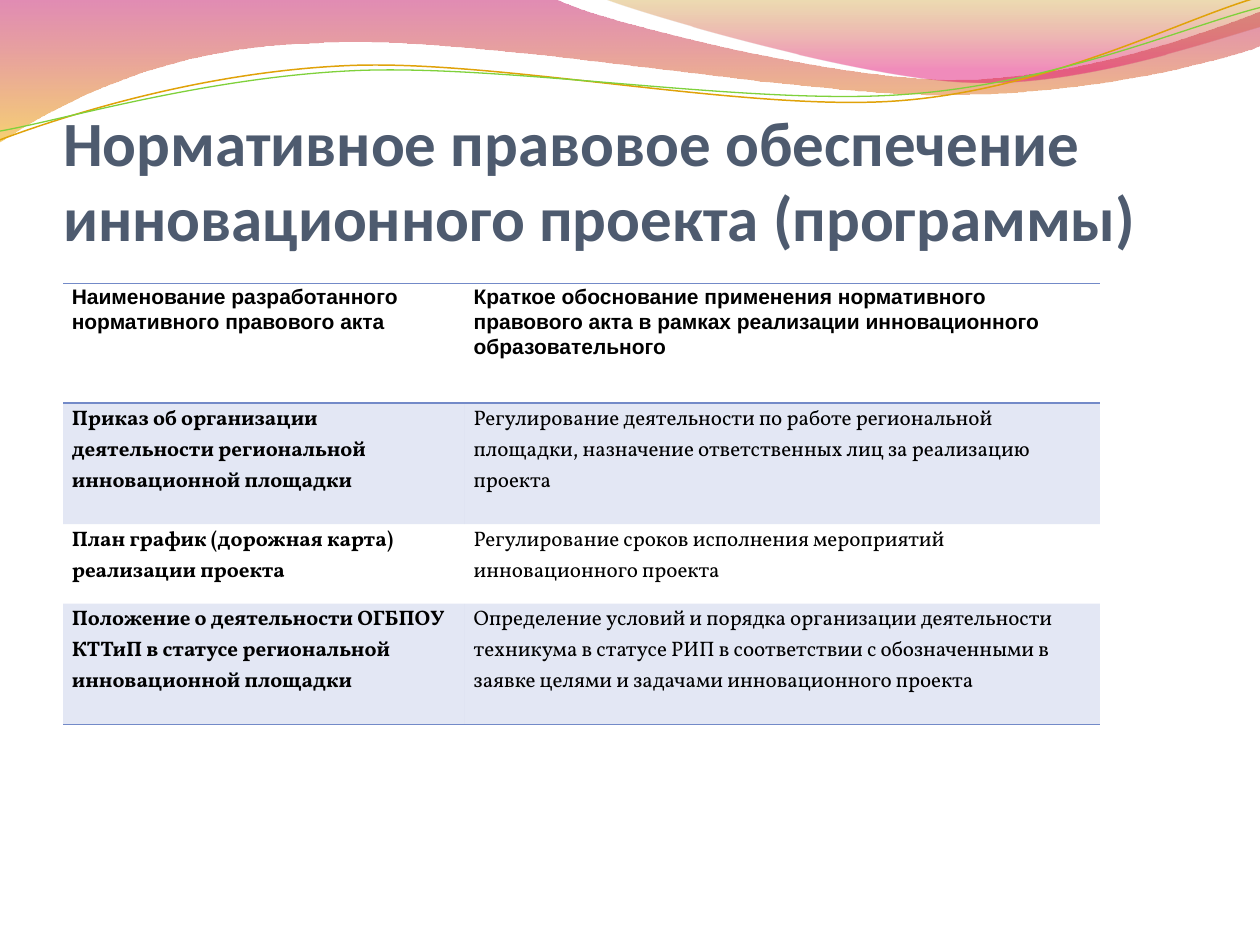
from dataclasses import dataclass
from math import cos, radians, sin

from lxml.etree import SubElement
from pptx import Presentation
from pptx.dml.color import RGBColor
from pptx.enum.text import MSO_ANCHOR as Anchor, MSO_AUTO_SIZE as AutoSize, PP_ALIGN as Align
from pptx.oxml import parse_xml
from pptx.oxml.ns import nsdecls, qn
from pptx.util import Inches, Pt

Point = tuple[float, float]
ACCENT = "738AC8"
NO_STYLE = "{2D5ABB26-0587-4C30-8999-92F81FD0307C}"
LINE_TILT = 357.3
LINE_CENTER = (4.99, 0.58)


@dataclass
class Stop:
    position: float
    color: str
    opacity: int


@dataclass
class Wave:
    """A segment of one point is a line; one of three points is a cubic curve."""
    start: Point
    segments: list[tuple[Point, ...]]
    stops: tuple[Stop, ...] = ()
    color: str = ""
    width: float = 0


@dataclass
class Row:
    height: float
    name: str
    purpose: str
    font: str = "Vollkorn"
    header: bool = False
    shaded: bool = False
    borders: tuple[str, ...] = ()


WAVES = [
    Wave((0, 0), [
        ((4.4, -0.01),),
        ((4.76, 0.17), (6.64, 0.63), (7.58, 0.63)),
        ((8.53, 0.63), (9.58, 0.26), (10, 0.09)),
        ((10.01, 0.36),),
        ((9.83, 0.44), (8.7, 0.76), (7.46, 0.75)),
        ((6.22, 0.75), (3.82, 0.28), (2.57, 0.34)),
        ((1.29, 0.36), (0.46, 0.83), (-0.01, 1.13)),
        ((0, 0),),
    ], stops=(Stop(0, "BD0059", 45), Stop(1, "F0AB00", 55))),
    Wave((4.79, -0.01), [
        ((5.09, 0.11), (6.82, 0.62), (7.69, 0.65)),
        ((8.56, 0.69), (9.61, 0.32), (10, 0.21)),
        ((10, 0),),
        ((4.79, -0.01),),
    ], stops=(Stop(0, "C38B00", 30), Stop(0.8, "E1006B", 45))),
    Wave((0, 1.11), [
        ((0.48, 0.93), (1.58, 0.57), (2.77, 0.52)),
        ((3.95, 0.47), (5.93, 0.89), (7.13, 0.8)),
        ((8.33, 0.71), (9.38, 0.15), (9.98, -0.02)),
    ], color="E0A209", width=0.85),
    Wave((0, 1.04), [
        ((0.47, 0.96), (1.64, 0.61), (2.83, 0.56)),
        ((4.03, 0.51), (5.97, 0.84), (7.17, 0.75)),
        ((8.36, 0.67), (9.41, 0.21), (10, 0.06)),
    ], color="7FD13B", width=0.75),
]

COLUMN_WIDTHS = (3.19, 5.04)
ROWS = [
    Row(0.95, "Наименование разработанного нормативного правового акта",
        "Краткое обоснование применения нормативного правового акта в рамках "
        "реализации инновационного образовательного",
        font="Arial", header=True, borders=("lnT", "lnB")),
    Row(0.96, "Приказ об организации деятельности региональной инновационной площадки",
        "Регулирование деятельности по работе региональной площадки, назначение "
        "ответственных лиц за реализацию проекта", shaded=True),
    Row(0.63, "План график (дорожная карта) реализации проекта",
        "Регулирование сроков исполнения мероприятий инновационного проекта"),
    Row(0.96, "Положение о деятельности ОГБПОУ КТТиП в статусе региональной "
        "инновационной площадки",
        "Определение условий и порядка организации деятельности техникума в статусе "
        "РИП в соответствии с обозначенными в заявке целями и задачами "
        "инновационного проекта", shaded=True, borders=("lnB",)),
]


def rgb(value: str) -> RGBColor:
    return RGBColor.from_string(value)


def set_opacity(color_element, percent: int) -> None:
    SubElement(color_element, qn("a:alpha"), val=str(percent * 1000))


def untilt(point: Point) -> Point:
    """Turn a point back, so that the tilt of the finished shape restores it."""
    angle = radians(-LINE_TILT)
    across, down = point[0] - LINE_CENTER[0], point[1] - LINE_CENTER[1]
    return (LINE_CENTER[0] + across * cos(angle) - down * sin(angle),
            LINE_CENTER[1] + across * sin(angle) + down * cos(angle))


def bend_segments(shape, segments: list[tuple[Point, ...]]) -> None:
    """Join the three line steps of each curve into one cubic curve."""
    steps = iter(list(shape._element.iter(qn("a:lnTo"))))
    for segment in segments:
        group = [next(steps) for _ in segment]
        if len(group) == 3:
            curve = parse_xml(f'<a:cubicBezTo {nsdecls("a")}/>')
            group[0].addprevious(curve)
            for step in group:
                curve.append(step[0])
                step.getparent().remove(step)


def draw_wave(page, wave: Wave) -> None:
    filled = bool(wave.stops)
    points = [wave.start, *(point for segment in wave.segments for point in segment)]
    if not filled:
        points = [untilt(point) for point in points]
    first, *others = [(Inches(x), Inches(y)) for x, y in points]
    builder = page.shapes.build_freeform(*first)
    builder.add_line_segments(others, close=filled)
    shape = builder.convert_to_shape()
    bend_segments(shape, wave.segments)
    shape.shadow.inherit = False
    if not filled:
        shape.rotation = LINE_TILT
        shape.fill.background()
        shape.line.color.rgb = rgb(wave.color)
        shape.line.width = Pt(wave.width)
        return
    shape.line.fill.background()
    shape.fill.gradient()
    shape.fill.gradient_angle = 270
    for target, stop in zip(shape.fill.gradient_stops, wave.stops):
        target.position = stop.position
        target.color.rgb = rgb(stop.color)
    colors = list(shape._element.spPr.iter(qn("a:srgbClr")))
    for element, stop in zip(colors, wave.stops):
        set_opacity(element, stop.opacity)


def add_span(para, text: str, font: str, size: float, color: str, bold: bool) -> None:
    span = para.add_run()
    span.text = text
    span.font.name = font
    span.font.size = Pt(size)
    span.font.bold = bold
    span.font.color.rgb = rgb(color)


def format_title(title) -> None:
    title.left, title.top = Inches(0.5), Inches(0.77)
    title.width, title.height = Inches(9), Inches(1.25)
    frame = title.text_frame
    frame.word_wrap = True
    frame.auto_size = AutoSize.NONE
    frame.vertical_anchor = Anchor.BOTTOM
    frame.margin_left = frame.margin_right = frame.margin_bottom = 0
    frame.margin_top = Inches(0.05)
    para = frame.paragraphs[0]
    para.alignment = Align.LEFT
    add_span(para, "Нормативное правовое обеспечение инновационного проекта (программы)",
             "Calibri", 36, "4E5B6F", True)


def fill_cell(cell, row: Row, text: str, bold: bool) -> None:
    cell.margin_left = cell.margin_right = Inches(0.07)
    cell.margin_top = cell.margin_bottom = 0
    para = cell.text_frame.paragraphs[0]
    para.line_spacing = 1.07
    add_span(para, text, row.font, 12, "000000", bold)
    properties = cell._tc.get_or_add_tcPr()
    for side in row.borders:
        properties.append(parse_xml(
            f'<a:{side} {nsdecls("a")} w="{Pt(1)}"><a:solidFill>'
            f'<a:srgbClr val="{ACCENT}"/></a:solidFill></a:{side}>'))
    if row.shaded:
        cell.fill.solid()
        cell.fill.fore_color.rgb = rgb(ACCENT)
        set_opacity(properties.find(qn("a:solidFill"))[0], 20)
    else:
        cell.fill.background()


def draw_table(page) -> None:
    frame = page.shapes.add_table(
        len(ROWS), len(COLUMN_WIDTHS), Inches(0.5), Inches(2.25),
        Inches(sum(COLUMN_WIDTHS)), Inches(sum(row.height for row in ROWS)))
    table = frame.table
    table.first_row = table.horz_banding = False
    table._tbl.tblPr.find(qn("a:tableStyleId")).text = NO_STYLE
    for column, width in zip(table.columns, COLUMN_WIDTHS):
        column.width = Inches(width)
    for index, row in enumerate(ROWS):
        table.rows[index].height = Inches(row.height)
        fill_cell(table.cell(index, 0), row, row.name, True)
        fill_cell(table.cell(index, 1), row, row.purpose, row.header)


def main() -> None:
    deck = Presentation()
    deck.slide_width, deck.slide_height = Inches(10), Inches(7.5)
    page = deck.slides.add_slide(deck.slide_layouts[5])
    for wave in WAVES:
        draw_wave(page, wave)
    title = page.shapes.title
    page.shapes._spTree.append(title._element)
    format_title(title)
    draw_table(page)
    deck.save("out.pptx")


if __name__ == "__main__":
    main()
